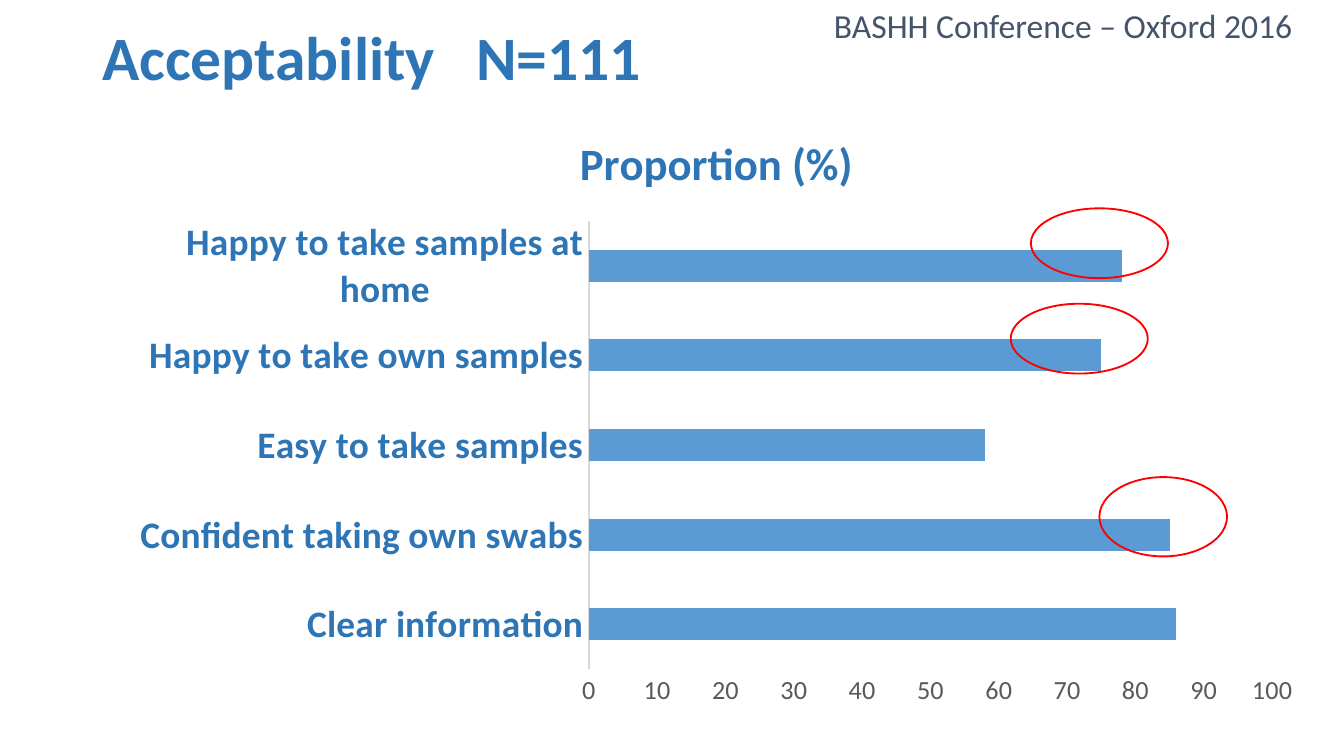
from pptx import Presentation
from pptx.chart.data import CategoryChartData
from pptx.dml.color import RGBColor
from pptx.enum.chart import XL_CHART_TYPE, XL_TICK_MARK
from pptx.enum.shapes import MSO_SHAPE
from pptx.enum.text import MSO_ANCHOR, PP_ALIGN
from pptx.util import Inches, Pt

BAR_CLUSTERED = XL_CHART_TYPE.BAR_CLUSTERED
NO_TICK = XL_TICK_MARK.NONE
ELLIPSE = MSO_SHAPE.OVAL
MIDDLE, TOP = MSO_ANCHOR.MIDDLE, MSO_ANCHOR.TOP
LEFT = PP_ALIGN.LEFT

FONT = "Calibri"
HEADING_BLUE = "2E75B6"
TITLE_ONLY = 5

# Widescreen slide, 16 to 9
presentation = Presentation()
presentation.slide_width = Inches(10)
presentation.slide_height = presentation.slide_width * 9 // 16
slide = presentation.slides.add_slide(presentation.slide_layouts[TITLE_ONLY])

# Grid of 100 columns by 100 rows
column = presentation.slide_width / 100
row = presentation.slide_height / 100


def style_font(font, size, color, bold=False):
    font.name, font.size, font.bold = FONT, Pt(size), bold
    font.color.rgb = RGBColor.from_string(color)


def write_text(shape, text, size, color, bold=False, anchor=TOP, spacing=1.0):
    frame = shape.text_frame
    frame.word_wrap = True
    frame.vertical_anchor = anchor
    frame.margin_left = frame.margin_right = Inches(0.07)
    frame.margin_top = frame.margin_bottom = Inches(0.04)
    paragraph = frame.paragraphs[0]
    paragraph.text = text
    paragraph.alignment = LEFT
    paragraph.line_spacing = spacing
    style_font(paragraph.runs[0].font, size, color, bold)


# Conference name
conference = slide.shapes.add_textbox(
    int(61.35 * column), 0, int(35.8 * column), int(9.24 * row))
write_text(conference, "BASHH Conference – Oxford 2016", 18, "44546A")

# Title
title = slide.shapes.title
title.left, title.top = int(6.9 * column), int(0.36 * row)
title.width, title.height = int(86.2 * column), int(15.3 * row)
write_text(title, "Acceptability   N=111", 33, HEADING_BLUE,
           bold=True, anchor=MIDDLE, spacing=0.9)

# Bar chart
answers = {
    "Clear information": 86,
    "Confident taking own swabs": 85,
    "Easy to take samples": 58,
    "Happy to take own samples": 75,
    "Happy to take samples at home": 78,
}
chart_data = CategoryChartData()
chart_data.categories = list(answers)
chart_data.add_series("Proportion (%)", list(answers.values()))
chart = slide.shapes.add_chart(
    BAR_CLUSTERED, int(8.65 * column), int(14.04 * row),
    int(89.3 * column), int(81.07 * row), chart_data).chart
style_font(chart.font, 10, "000000")
chart.has_legend = False
chart.has_title = True
chart_title = chart.chart_title.text_frame.paragraphs[0]
chart_title.text = "Proportion (%)"
style_font(chart_title.runs[0].font, 24, HEADING_BLUE, bold=True)
chart.chart_title.include_in_layout = False

plot = chart.plots[0]
plot.gap_width = 182
plot.vary_by_categories = False
bar_fill = plot.series[0].format.fill
bar_fill.solid()
bar_fill.fore_color.rgb = RGBColor.from_string("5B9BD5")

# Axes
question_axis, percent_axis = chart.category_axis, chart.value_axis
for axis in (question_axis, percent_axis):
    axis.has_major_gridlines = False
    axis.major_tick_mark = axis.minor_tick_mark = NO_TICK
style_font(question_axis.tick_labels.font, 20, HEADING_BLUE, bold=True)
question_axis.format.line.color.rgb = RGBColor.from_string("D9D9D9")
question_axis.format.line.width = Pt(0.75)
style_font(percent_axis.tick_labels.font, 14, "595959")
percent_axis.format.line.fill.background()
percent_axis.minimum_scale, percent_axis.maximum_scale = 0, 100
percent_axis.major_unit = 10

# Rings around the bar ends: left, top, width, height in grid units
rings = [
    (76.7, 27.56, 10.2, 9.24),
    (75.2, 40.18, 10.2, 9.24),
    (81.8, 63.11, 9.5, 10.49),
]
for left, top, width, height in rings:
    ring = slide.shapes.add_shape(
        ELLIPSE, int(left * column), int(top * row),
        int(width * column), int(height * row))
    ring.shadow.inherit = False
    ring.fill.background()
    ring.line.color.rgb = RGBColor.from_string("FF0000")
    ring.line.width = Pt(1)

presentation.save("out.pptx")
